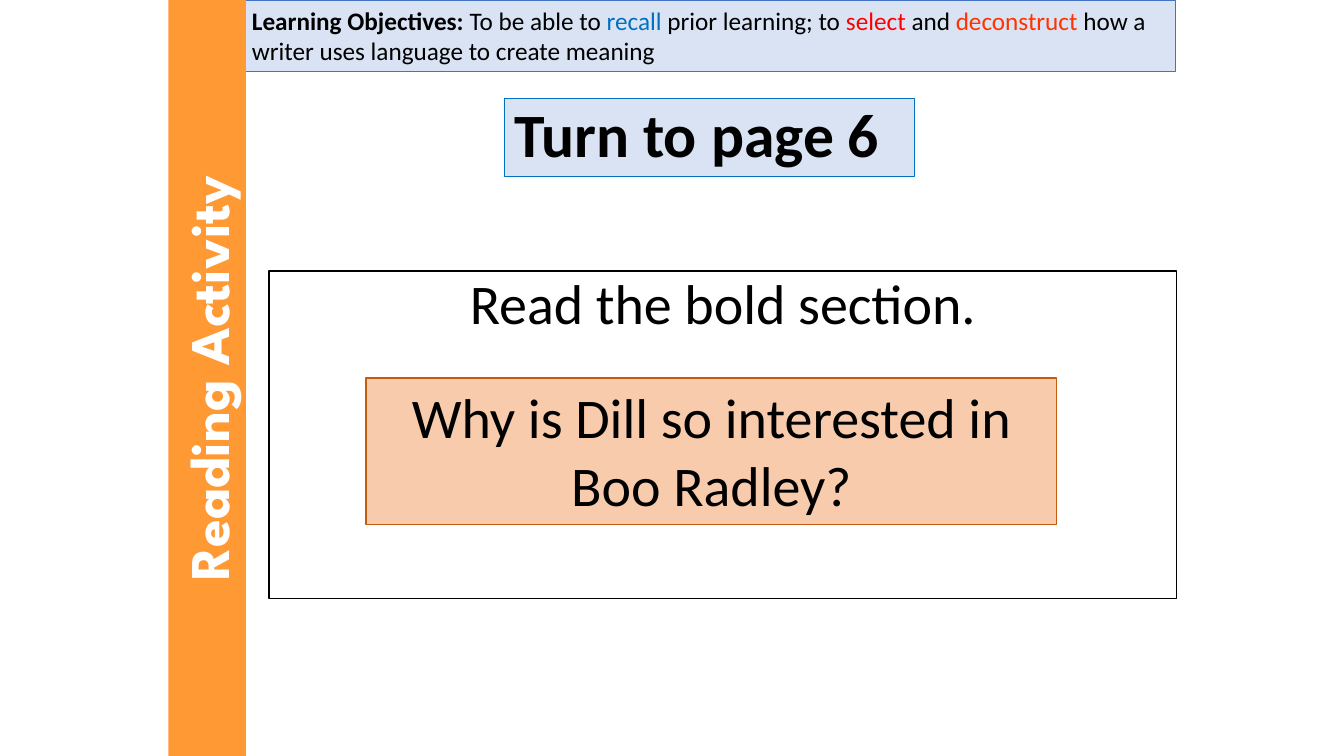
import pptx
import pptx.dml.color
import pptx.enum.shapes
import pptx.enum.text
import pptx.util

Inches = pptx.util.Inches
Pt = pptx.util.Pt
ALIGN = pptx.enum.text.PP_ALIGN
ANCHOR = pptx.enum.text.MSO_ANCHOR

COLOURS = {
    "black": "000000", "white": "FFFFFF", "pale blue": "DAE3F3",
    "blue": "0070C0", "border blue": "4472C4", "peach": "F8CBAD",
    "brown": "C55A11", "red": "FF0000", "vermilion": "FF3300",
    "orange": "FF9933",
}


def rgb(name):
    """Return the named colour."""
    return pptx.dml.color.RGBColor.from_string(COLOURS[name])


def add_panel(slide, box, fill, line=None, line_width=0.75, anchor=ANCHOR.TOP):
    """Add a filled rectangle in box (left, top, width, height in inches)."""
    panel = slide.shapes.add_shape(
        pptx.enum.shapes.MSO_SHAPE.RECTANGLE, *map(Inches, box))
    panel.shadow.inherit = False
    panel.fill.solid()
    panel.fill.fore_color.rgb = rgb(fill)
    if line:
        panel.line.color.rgb = rgb(line)
        panel.line.width = Pt(line_width)
    else:
        panel.line.fill.background()
    panel.text_frame.word_wrap = True
    panel.text_frame.vertical_anchor = anchor
    return panel


def write(panel, runs, size, align=ALIGN.CENTER, font="Calibri"):
    """Write runs of (text, colour, bold) and return their paragraph."""
    paragraph = panel.text_frame.paragraphs[0]
    paragraph.alignment = align
    for text, colour, bold in runs:
        run = paragraph.add_run()
        run.text = text
        run.font.name = font
        run.font.size = Pt(size)
        run.font.bold = bold
        run.font.color.rgb = rgb(colour)
    return paragraph


def add_page_title(slide, box):
    """Add the page instruction."""
    title = add_panel(slide, box, "pale blue", "blue", anchor=ANCHOR.MIDDLE)
    line = write(title, [("Turn to page 6", "black", True)], 44, ALIGN.LEFT)
    line.line_spacing = 0.9


def add_reading_task(slide, box):
    """Add the reading frame with its question inside."""
    left, top, width, height = box
    frame = add_panel(slide, box, "white", "black", 1)
    instruction = write(frame, [("Read the bold section.", "black", False)], 40)
    instruction.line_spacing = 0.9
    instruction.space_before = Pt(10)
    question = add_panel(
        slide, (left + 0.96, top + 1.06, width - 2.15, height - 1.8),
        "peach", "brown")
    write(question,
          [("Why is Dill so interested in Boo Radley?", "black", False)], 40)


def add_objectives(slide, box):
    """Add the learning objectives with their coloured key verbs."""
    objectives = add_panel(slide, box, "pale blue", "border blue", 0.5)
    write(objectives, [
        ("Learning Objectives: ", "black", True),
        ("To be able to ", "black", False),
        ("recall ", "blue", False),
        ("prior learning; to ", "black", False),
        ("select ", "red", False),
        ("and ", "black", False),
        ("deconstruct ", "vermilion", False),
        ("how a writer uses language to create meaning", "black", False),
    ], 18, ALIGN.LEFT)


def add_activity_bar(slide, box):
    """Add the upright activity bar, turned to fill the box."""
    left, top, width, height = box
    shift = (height - width) / 2
    bar = add_panel(slide, (left - shift, top + shift, height, width), "orange")
    bar.rotation = 270
    write(bar, [("Reading Activity", "white", True)], 40, font="League Spartan")


def main():
    """Build and save the slide."""
    deck = pptx.Presentation()
    deck.slide_width = Inches(13.33)
    deck.slide_height = Inches(7.5)
    slide = deck.slides.add_slide(deck.slide_layouts[6])
    add_page_title(slide, (5, 0.98, 4.07, 0.77))
    add_reading_task(slide, (2.67, 2.69, 9, 3.25))
    add_objectives(slide, (2.4, 0, 9.26, 0.71))
    add_activity_bar(slide, (1.67, 0, 0.77, 7.5))
    deck.save("out.pptx")


if __name__ == "__main__":
    main()
